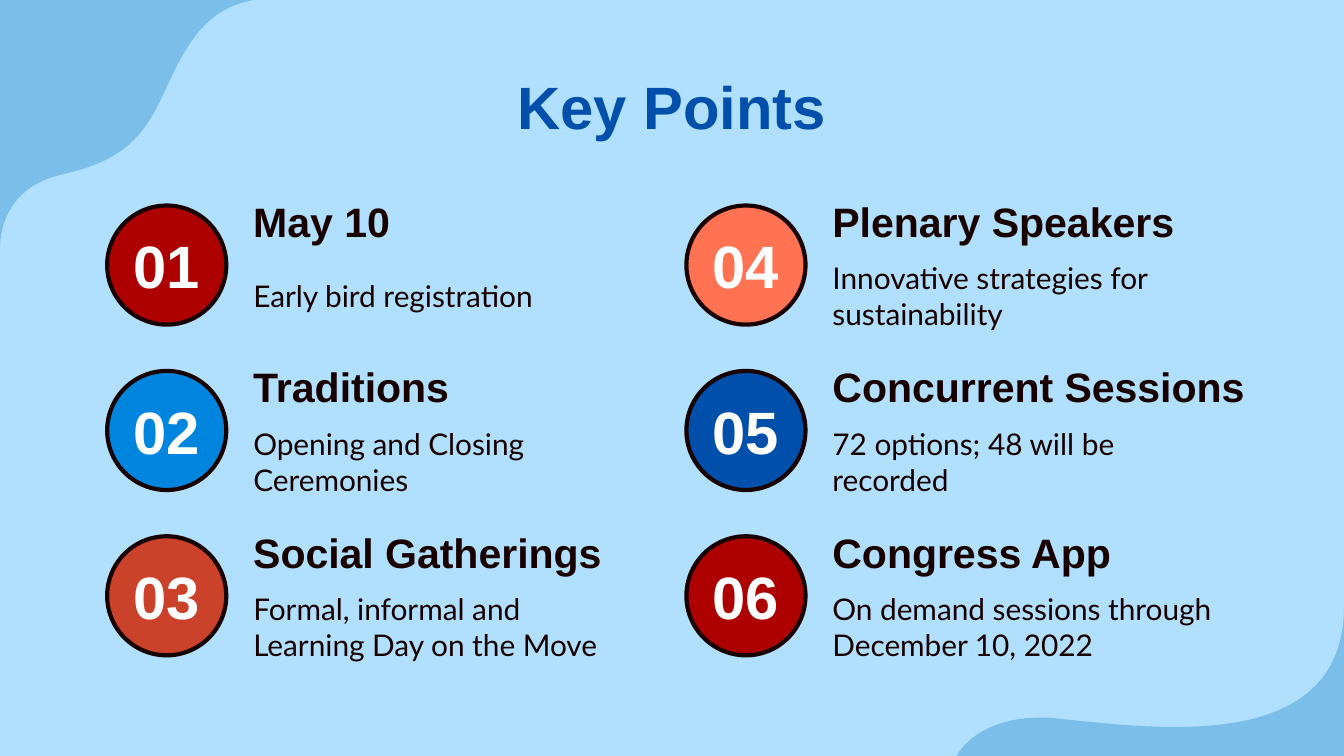
import lxml.etree
import pptx
import pptx.dml.color
import pptx.enum.shapes
import pptx.enum.text
import pptx.oxml.ns
import pptx.util

Pt = pptx.util.Pt
RGBColor = pptx.dml.color.RGBColor
ALIGN = pptx.enum.text.PP_ALIGN
ANCHOR = pptx.enum.text.MSO_ANCHOR
qn = pptx.oxml.ns.qn

SKY = RGBColor(0xB1, 0xE0, 0xFF)
WAVE = RGBColor(0x7C, 0xBE, 0xEA)
INK = RGBColor(0x18, 0x00, 0x00)
WHITE = RGBColor(0xFF, 0xFF, 0xFF)
NAVY = RGBColor(0x00, 0x4F, 0xAB)
BLUE = RGBColor(0x00, 0x85, 0xDE)
RED = RGBColor(0xAD, 0x01, 0x01)
RUST = RGBColor(0xCA, 0x42, 0x29)
CORAL = RGBColor(0xFF, 0x73, 0x52)

# Heading, detail, circle colour, heading width, detail width
POINTS = [
    ("May 10", "Early bird registration", RED, 224, 202.3),
    ("Traditions", "Opening and Closing Ceremonies", BLUE, 224, 202.3),
    ("Social Gatherings", "Formal, informal and Learning Day on the Move", RUST, 224, 202.3),
    ("Plenary Speakers", "Innovative strategies for sustainability", CORAL, 224, 202.3),
    ("Concurrent Sessions", "72 options; 48 will be recorded", NAVY, 238.3, 202.3),
    ("Congress App", "On demand sessions through December 10, 2022", RED, 224, 230.4),
]
ROWS = 3
GRID_LEFT, GRID_TOP = 57.4, 110.1
COLUMN_PITCH, ROW_PITCH = 310.3, 88.6
CIRCLE = 63.8

# Corner waves: a start, Bezier curves (two controls and an end each), a corner
TOP_WAVE = [
    (0, 132.5),
    (0, 123.8), (3.6, 100.1), (33.1, 93.6),
    (67.7, 85.7), (77.8, 72), (88.6, 48.2),
    (99.4, 24.5), (110.2, 4.3), (136.1, 0),
    (0, 0),
]
BOTTOM_WAVE = [
    (720, 324.7),
    (720, 378.7), (673.9, 389.5), (629.3, 389.5),
    (606.2, 389.5), (583.9, 386.6), (568.1, 385.2),
    (564.5, 384.5), (560.9, 384.5), (557.3, 384.5),
    (521.3, 384.5), (511.9, 406), (511.9, 406),
    (720, 406),
]


def bend_lines(shape):
    """Turn each three line segments, except the last one, into a Bezier curve."""
    lines = list(shape._element.iter(qn("a:lnTo")))
    # The last two lines run to the corner and back to the start
    count = len(lines) // 3 * 3
    for first in range(0, count, 3):
        trio = lines[first:first + 3]
        curve = lxml.etree.Element(qn("a:cubicBezTo"))
        trio[0].addprevious(curve)
        for line in trio:
            curve.append(line[0])
            line.getparent().remove(line)


def add_wave(page, points):
    start, *outline = [(Pt(x), Pt(y)) for x, y in points]
    builder = page.shapes.build_freeform(*start)
    builder.add_line_segments(outline, close=True)
    wave = builder.convert_to_shape()
    bend_lines(wave)
    wave.shadow.inherit = False
    wave.fill.solid()
    wave.fill.fore_color.rgb = WAVE
    wave.line.fill.background()


def add_circle(page, left, top, colour):
    circle = page.shapes.add_shape(
        pptx.enum.shapes.MSO_SHAPE.OVAL, Pt(left), Pt(top), Pt(CIRCLE), Pt(CIRCLE))
    circle.shadow.inherit = False
    circle.fill.solid()
    circle.fill.fore_color.rgb = colour
    circle.line.color.rgb = INK
    circle.line.width = Pt(2.25)


def add_text(page, text, left, top, width, height, size, colour=INK, font="Arial",
             align=ALIGN.LEFT, anchor=ANCHOR.MIDDLE, top_inset=7.2):
    box = page.shapes.add_textbox(Pt(left), Pt(top), Pt(width), Pt(height))
    frame = box.text_frame
    frame.word_wrap = True
    frame.vertical_anchor = anchor
    frame.margin_left = frame.margin_right = frame.margin_bottom = Pt(7.2)
    frame.margin_top = Pt(top_inset)
    para = frame.paragraphs[0]
    para.alignment = align
    span = para.add_run()
    span.text = text
    span.font.name = font
    span.font.size = Pt(size)
    span.font.bold = font == "Arial"
    span.font.color.rgb = colour


def add_point(page, index, heading, detail, colour, heading_width, detail_width):
    column, row = divmod(index, ROWS)
    left = GRID_LEFT + column * COLUMN_PITCH
    top = GRID_TOP + row * ROW_PITCH
    add_circle(page, left, top, colour)
    add_text(page, f"{index + 1:02d}", left + 1.6, top + 11.6, 60.5, 41.8, 32,
             WHITE, align=ALIGN.CENTER, top_inset=5.8)
    add_text(page, heading, left + 71.2, top - 6.4, heading_width, 29.5, 22)
    add_text(page, detail, left + 71.2, top + 21.1, detail_width, 54.7, 16, font="Lato")


def main():
    deck = pptx.Presentation()
    deck.slide_width, deck.slide_height = Pt(720), Pt(405)
    page = deck.slides.add_slide(deck.slide_layouts[6])

    # Background
    page.background.fill.solid()
    page.background.fill.fore_color.rgb = SKY
    add_wave(page, TOP_WAVE)
    add_wave(page, BOTTOM_WAVE)

    # Title
    add_text(page, "Key Points", 56.5, 30.2, 607, 46.8, 32, NAVY,
             align=ALIGN.CENTER, anchor=ANCHOR.TOP)

    # Numbered points, filled column by column
    for index, point in enumerate(POINTS):
        add_point(page, index, *point)

    deck.save("out.pptx")


if __name__ == "__main__":
    main()
